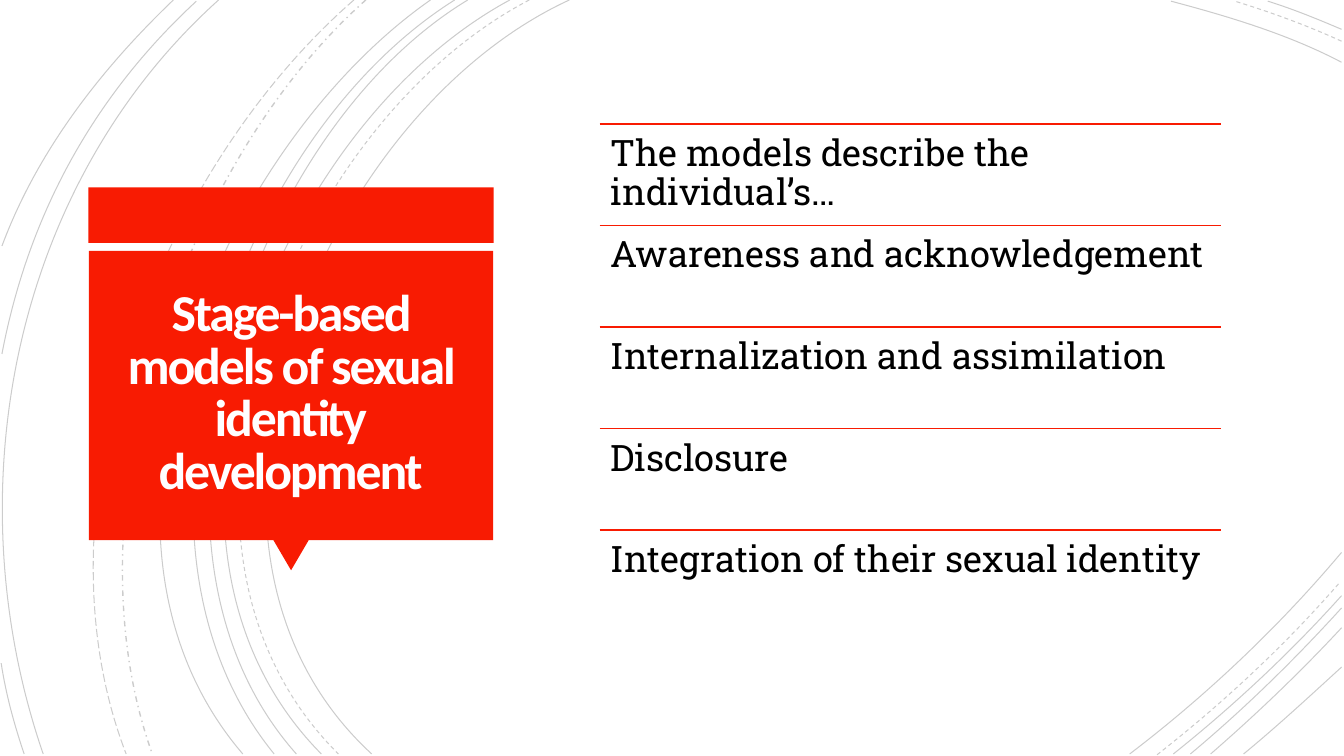
from dataclasses import dataclass

from lxml.etree import SubElement
from pptx import Presentation
from pptx.dml.color import RGBColor
from pptx.enum.dml import MSO_LINE
from pptx.enum.shapes import MSO_CONNECTOR, MSO_SHAPE
from pptx.enum.text import MSO_ANCHOR, MSO_AUTO_SIZE, PP_ALIGN
from pptx.oxml.ns import qn
from pptx.text.text import TextFrame
from pptx.util import Cm, Pt

RED = "F81B02"
Point = tuple[float, float]


@dataclass
class Curve:
    start: Point
    bend: Point
    turn: Point
    end: Point
    dash: MSO_LINE = MSO_LINE.SOLID
    weight: float = 0.75


@dataclass
class Block:
    kind: MSO_SHAPE
    left: float
    top: float
    width: float
    height: float
    turn: int = 0


CURVES = [
    Curve((14.35, 0), (8, 2.92), (3.63, 13.72), (9.37, 19)),
    Curve((33.81, 1.57), (32.46, 0.86), (30.94, 0.41), (29.51, 0.03)),
    Curve((28.47, 19), (30.4, 17.53), (32.23, 15.8), (33.81, 13.92)),
    Curve((13.34, 0), (7.24, 3.18), (3.12, 13.64), (8.53, 19), MSO_LINE.DASH),
    Curve((33.81, 1.04), (32.94, 0.64), (32, 0.3), (31.12, 0.03), MSO_LINE.DASH),
    Curve((29.16, 19.02), (30.81, 17.73), (32.39, 16.26), (33.78, 14.66), MSO_LINE.DASH),
    Curve((12.85, 0), (6.86, 3.23), (2.79, 13.64), (8.1, 19)),
    Curve((33.81, 0.74), (33.2, 0.48), (32.59, 0.23), (31.95, 0.03)),
    Curve((29.57, 19), (31.06, 17.81), (32.51, 16.46), (33.81, 15.01)),
    Curve((11.79, 0), (6.2, 3.38), (2.79, 13.74), (7.47, 19)),
    Curve((30, 19), (31.34, 17.88), (32.61, 16.64), (33.81, 15.32)),
    Curve((11.46, 0), (5.87, 3.51), (2.46, 13.54), (6.91, 19)),
    Curve((30.51, 19), (31.65, 18.01), (32.77, 16.94), (33.81, 15.82)),
    Curve((10.85, 0), (5.51, 3.73), (1.35, 13.44), (6.12, 19)),
    Curve((31.34, 19), (32.18, 18.31), (33, 17.55), (33.81, 16.81)),
    Curve((9.22, 0), (4.47, 4.22), (1.65, 12.93), (3.84, 19), MSO_LINE.DASH_DOT, 1),
    Curve((8.92, 0), (3.99, 4.29), (0.74, 12.67), (3.18, 19), MSO_LINE.LONG_DASH),
    Curve((5.51, 0), (0.28, 4.7), (-1.17, 12.45), (1.09, 19)),
    Curve((4.95, 0.03), (2.34, 2.44), (0.71, 5.44), (0.05, 8.92)),
    Curve((0.03, 16.71), (0.15, 17.5), (0.36, 18.26), (0.61, 19)),
    Curve((4.37, 0), (2.54, 1.75), (0.94, 3.81), (0.05, 6.2)),
]

BLOCKS = [
    Block(MSO_SHAPE.RECTANGLE, 2.23, 4.72, 10.21, 1.4),
    Block(MSO_SHAPE.ISOSCELES_TRIANGLE, 6.89, 13.61, 0.89, 0.76, 180),
    Block(MSO_SHAPE.RECTANGLE, 2.24, 6.32, 10.19, 7.29),
]

ROWS = [
    "The models describe the individual’s…",
    "Awareness and acknowledgement",
    "Internalization and assimilation",
    "Disclosure",
    "Integration of their sexual identity",
]
LEFT, TOP, WIDTH, PITCH = 15.11, 3.12, 15.67, 2.56


def paint(form, color: str) -> None:
    form.rgb = RGBColor.from_string(color)


def draw_curve(slide, curve: Curve) -> None:
    first, *rest = [
        (Cm(x), Cm(y)) for x, y in (curve.start, curve.bend, curve.turn, curve.end)
    ]
    pen = slide.shapes.build_freeform(*first)
    pen.add_line_segments(rest, close=False)
    shape = pen.convert_to_shape()
    route = shape._element.spPr.find(".//" + qn("a:path"))
    arc = SubElement(route, qn("a:cubicBezTo"))
    for leg in route.findall(qn("a:lnTo")):
        arc.append(leg[0])
        route.remove(leg)
    shape.shadow.inherit = False
    shape.fill.background()
    line = shape.line
    paint(line.color, "000000")
    line.width = Pt(curve.weight)
    line.dash_style = curve.dash
    color = shape._element.spPr.find(".//" + qn("a:ln")).find(".//" + qn("a:srgbClr"))
    SubElement(color, qn("a:alpha"), val="20000")


def draw_block(slide, block: Block) -> None:
    shape = slide.shapes.add_shape(
        block.kind, Cm(block.left), Cm(block.top), Cm(block.width), Cm(block.height)
    )
    shape.rotation = block.turn
    shape.shadow.inherit = False
    shape.fill.solid()
    paint(shape.fill.fore_color, RED)
    shape.line.fill.background()


def set_frame(frame: TextFrame, inset: float, anchor: MSO_ANCHOR) -> None:
    frame.word_wrap = True
    frame.auto_size = MSO_AUTO_SIZE.NONE
    frame.vertical_anchor = anchor
    frame.margin_left = frame.margin_right = Cm(inset)
    frame.margin_top = frame.margin_bottom = Cm(inset)


def set_font(para, name: str, size: int, color: str, space: float) -> None:
    para.line_spacing = space
    para.font.name = name
    para.font.size = Pt(size)
    paint(para.font.color, color)


def draw_title(slide) -> None:
    title = slide.shapes.title
    title.left, title.top = Cm(2.46), Cm(6.53)
    title.width, title.height = Cm(9.73), Cm(6.83)
    slide.shapes._spTree.append(title._element)
    set_frame(title.text_frame, 0.64, MSO_ANCHOR.MIDDLE)
    para = title.text_frame.paragraphs[0]
    para.alignment = PP_ALIGN.CENTER
    set_font(para, "Calibri", 37, "FFFEFF", 0.85)
    para.font.bold = True
    para.add_run().text = "Stage-based models of sexual identity"
    para.add_line_break()
    para.add_run().text = "development"
    for run in para.runs:
        run.font._element.set("spc", "-150")


def draw_row(slide, text: str, top: float) -> None:
    rule = slide.shapes.add_connector(
        MSO_CONNECTOR.STRAIGHT, Cm(LEFT), Cm(top), Cm(LEFT + WIDTH), Cm(top)
    )
    paint(rule.line.color, RED)
    rule.line.width = Pt(1.25)
    SubElement(rule._element.spPr, qn("a:effectLst"))
    box = slide.shapes.add_textbox(Cm(LEFT), Cm(top), Cm(WIDTH), Cm(PITCH))
    set_frame(box.text_frame, 0.28, MSO_ANCHOR.TOP)
    para = box.text_frame.paragraphs[0]
    para.text = text
    set_font(para, "Roboto Slab", 26, "000000", 0.9)


def main() -> None:
    deck = Presentation()
    deck.slide_width, deck.slide_height = Cm(33.87), Cm(19.05)
    slide = deck.slides.add_slide(deck.slide_layouts[5])
    for curve in CURVES:
        draw_curve(slide, curve)
    for block in BLOCKS:
        draw_block(slide, block)
    draw_title(slide)
    for i, text in enumerate(ROWS):
        draw_row(slide, text, TOP + i * PITCH)
    deck.save("out.pptx")


if __name__ == "__main__":
    main()
